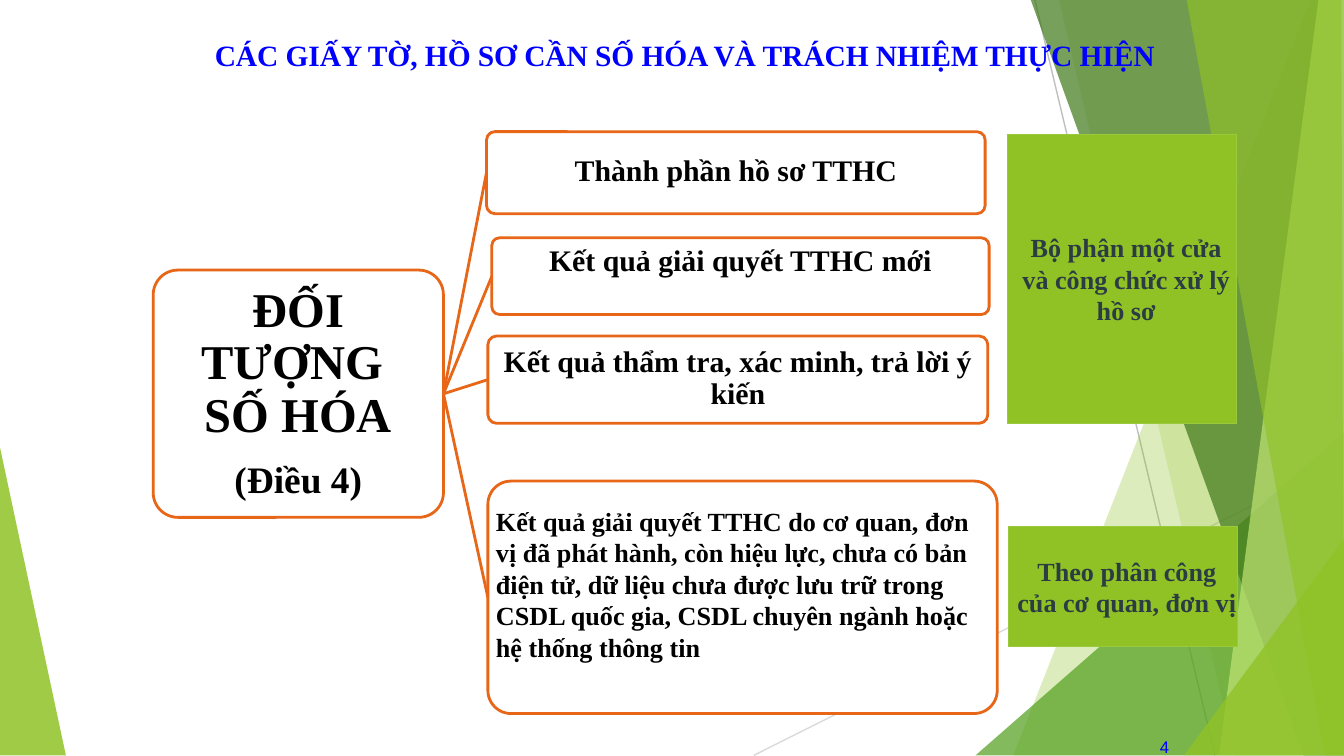
"""Build the slide on documents to digitise and who is responsible for them."""
from dataclasses import dataclass

from lxml import etree
from pptx import Presentation
from pptx.dml.color import RGBColor
from pptx.enum.shapes import MSO_CONNECTOR, MSO_SHAPE
from pptx.enum.text import MSO_ANCHOR, PP_ALIGN
from pptx.oxml.ns import qn
from pptx.util import Inches, Pt


@dataclass(frozen=True)
class Theme:
    green: str = "90C226"
    mid_green: str = "54A021"
    dark_green: str = "3F7819"
    pale_green: str = "C0E474"
    owner_line: str = "99CA3C"
    owner_text: str = "2C3C43"
    orange: str = "E76618"
    blue: str = "0000FF"
    black: str = "000000"
    white: str = "FFFFFF"
    light_grey: str = "D9D9D9"
    grey: str = "BFBFBF"
    serif: str = "Times New Roman"
    sans: str = "Arial"
    root: float = 26
    root_note: float = 20
    topic: float = 16
    title: float = 15.75
    body: float = 14
    number: float = 9


THEME = Theme()


def write_text(frame, paragraphs, color, align=PP_ALIGN.CENTER, anchor=MSO_ANCHOR.MIDDLE,
               insets=(0, 0, 0, 0), spacing=1.0, font=THEME.serif, bold=True):
    frame.word_wrap = True
    frame.vertical_anchor = anchor
    frame.margin_left, frame.margin_top, frame.margin_right, frame.margin_bottom = map(Inches, insets)
    for index, (text, size) in enumerate(paragraphs):
        para = frame.add_paragraph() if index else frame.paragraphs[0]
        para.alignment = align
        para.line_spacing = spacing
        para.space_before = Pt(10 if index else 0)
        for row, words in enumerate(text.split("\n")):
            if row:
                para.add_line_break()
            span = para.add_run()
            span.text = words
            span.font.name = font
            span.font.size = Pt(size)
            span.font.bold = bold
            span.font.color.rgb = RGBColor.from_string(color)


def draw_line(page, start, end, color, width):
    line = page.shapes.add_connector(MSO_CONNECTOR.STRAIGHT, *map(Inches, start + end))
    line.line.color.rgb = RGBColor.from_string(color)
    line.line.width = Pt(width)
    etree.SubElement(line._element.spPr, qn("a:effectLst"))
    return line


deck = Presentation()
deck.slide_width = Inches(10)
deck.slide_height = Inches(10) * 9 // 16
page = deck.slides.add_slide(deck.slide_layouts[6])

draw_line(page, (5.61, 5.62), (10, 3.42), THEME.light_grey, 0.75)
draw_line(page, (7.7, 0), (9.04, 5.62), THEME.grey, 0.75)

facets = [
    (THEME.green, 85, [(0, 3.33), (0.49, 5.62), (0, 5.62)]),
    (THEME.green, 30, [(9.75, 0), (7.54, 5.62), (10, 5.62), (10, 0)]),
    (THEME.green, 20, [(7.88, 0), (9.19, 5.62), (10, 5.62), (10, 0)]),
    (THEME.mid_green, 72, [(7.26, 5.62), (10, 3.22), (10, 5.62)]),
    (THEME.dark_green, 70, [(7.67, 0), (9.7, 5.62), (10, 5.62), (10, 0)]),
    (THEME.pale_green, 70, [(9.81, 0), (9.07, 5.62), (10, 5.62), (10, 0)]),
    (THEME.green, 65, [(8.83, 0), (9.86, 5.62), (10, 5.62), (9.98, 0)]),
    (THEME.green, 80, [(8.81, 5.62), (10, 4.01), (10, 5.62)]),
]
for color, opacity, corners in facets:
    points = [(Inches(x), Inches(y)) for x, y in corners]
    builder = page.shapes.build_freeform(*points[0])
    builder.add_line_segments(points[1:], close=True)
    facet = builder.convert_to_shape()
    facet.shadow.inherit = False
    facet.fill.solid()
    facet.fill.fore_color.rgb = RGBColor.from_string(color)
    facet.line.fill.background()
    tint = facet._element.spPr.find(".//" + qn("a:srgbClr"))
    etree.SubElement(tint, qn("a:alpha"), val=str(opacity * 1000))

number_box = page.shapes.add_textbox(Inches(8.6), Inches(5.5), Inches(0.1), Inches(0.11))
write_text(number_box.text_frame, [("4", THEME.number)], THEME.blue, PP_ALIGN.RIGHT,
           font=THEME.sans, bold=False)

topic_insets = (0.03, 0.02, 0.03, 0.03)
nodes = [
    ((1.14, 2.01, 2.16, 1.84), [("ĐỐI TƯỢNG \nSỐ HÓA", THEME.root), ("(Điều 4)", THEME.root_note)],
     dict(insets=(0.08, 0.08, 0.08, 0.08), spacing=0.9)),
    ((3.62, 0.98, 3.71, 0.61), [("Thành phần hồ sơ TTHC", THEME.topic)],
     dict(insets=topic_insets, spacing=0.9)),
    ((3.66, 1.77, 3.7, 0.57), [("Kết quả giải quyết TTHC mới", THEME.topic)],
     dict(insets=(0.03, 0.01, 0.03, 0.03), anchor=MSO_ANCHOR.TOP)),
    ((3.63, 2.5, 3.72, 0.65), [("Kết quả thẩm tra, xác minh, trả lời ý kiến", THEME.topic)],
     dict(insets=topic_insets, spacing=0.9)),
    ((3.63, 3.58, 3.79, 1.73),
     [("Kết quả giải quyết TTHC do cơ quan, đơn vị đã phát hành, còn hiệu lực, chưa có bản "
       "điện tử, dữ liệu chưa được lưu trữ trong CSDL quốc gia, CSDL chuyên ngành hoặc "
       "hệ thống thông tin", THEME.body)],
     dict(insets=(0.01, 0.06, 0.06, 0.26), align=PP_ALIGN.LEFT)),
]
owners = [
    ((7.5, 1, 1.7, 2.15), [("Bộ phận một cửa và công chức xử lý hồ sơ", THEME.body)],
     dict(insets=(0.06, 0, 0, 0))),
    ((7.5, 3.92, 1.71, 0.89), [("Theo phân công của cơ quan, đơn vị", THEME.body)],
     dict(insets=(0.06, 0, 0, 0))),
]
groups = [
    (nodes, MSO_SHAPE.ROUNDED_RECTANGLE, THEME.white, THEME.orange, 1.5, THEME.black),
    (owners, MSO_SHAPE.RECTANGLE, THEME.green, THEME.owner_line, 0.5, THEME.owner_text),
]
boxes = []
for panels, outline, fill, border, width, text_color in groups:
    for place, paragraphs, options in panels:
        box = page.shapes.add_shape(outline, *map(Inches, place))
        box.shadow.inherit = False
        box.fill.solid()
        box.fill.fore_color.rgb = RGBColor.from_string(fill)
        box.line.color.rgb = RGBColor.from_string(border)
        box.line.width = Pt(width)
        if outline == MSO_SHAPE.ROUNDED_RECTANGLE:
            box.adjustments[0] = 0.1
        write_text(box.text_frame, paragraphs, text_color, **options)
        boxes.append(box)

root, *topics = boxes[:len(nodes)]
for topic in topics:
    branch = draw_line(page, (3.3, 2.93), (3.63, 2.93), THEME.orange, 1.5)
    branch.begin_connect(root, 3)
    branch.end_connect(topic, 1)

title_box = page.shapes.add_textbox(Inches(1.5), Inches(0.25), Inches(8.4), Inches(0.54))
write_text(title_box.text_frame, [("CÁC GIẤY TỜ, HỒ SƠ CẦN SỐ HÓA VÀ TRÁCH NHIỆM THỰC HIỆN", THEME.title)],
           THEME.blue, PP_ALIGN.LEFT, MSO_ANCHOR.TOP, (0.1, 0.05, 0.1, 0.05), 0.93)

deck.save("out.pptx")
